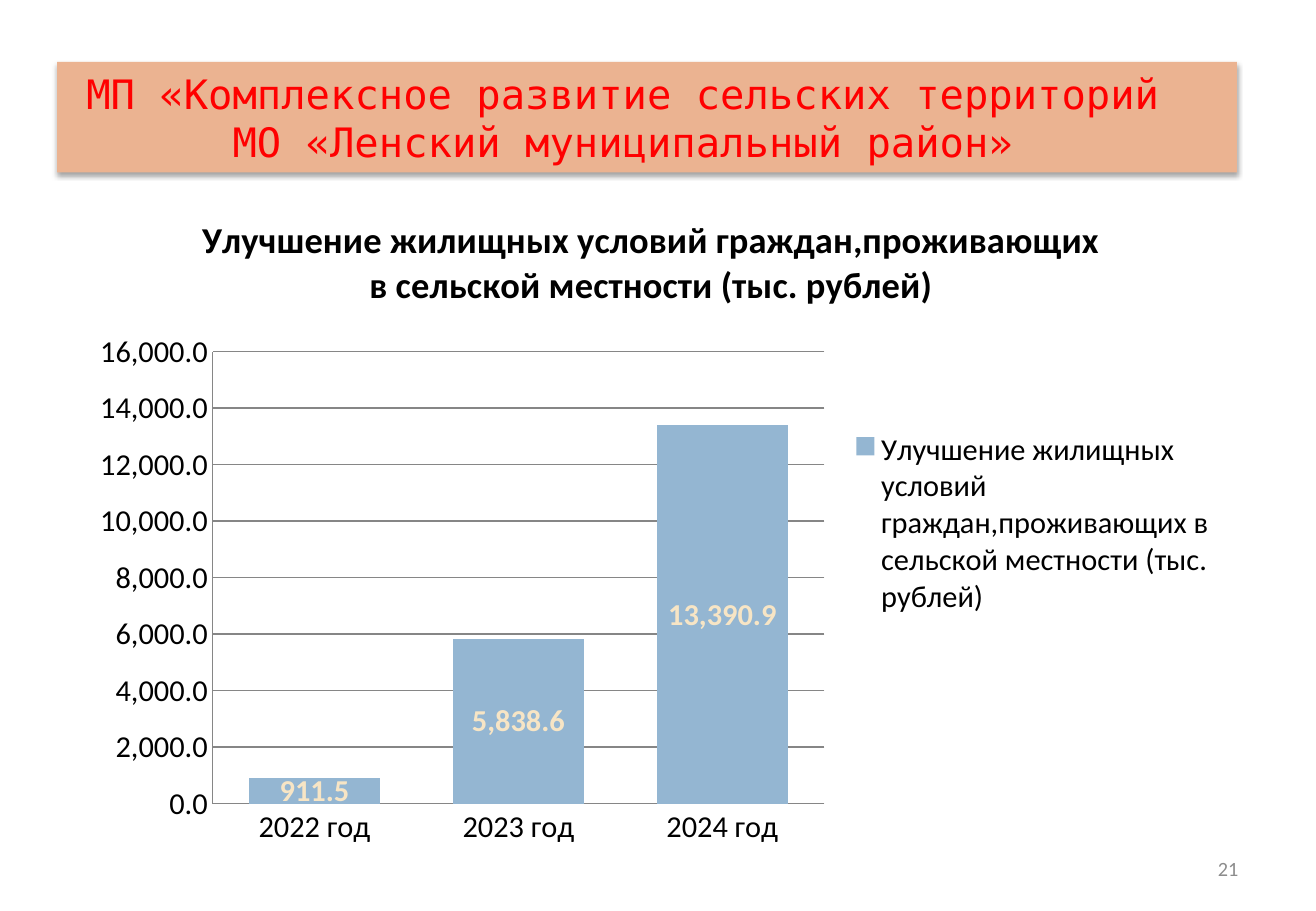
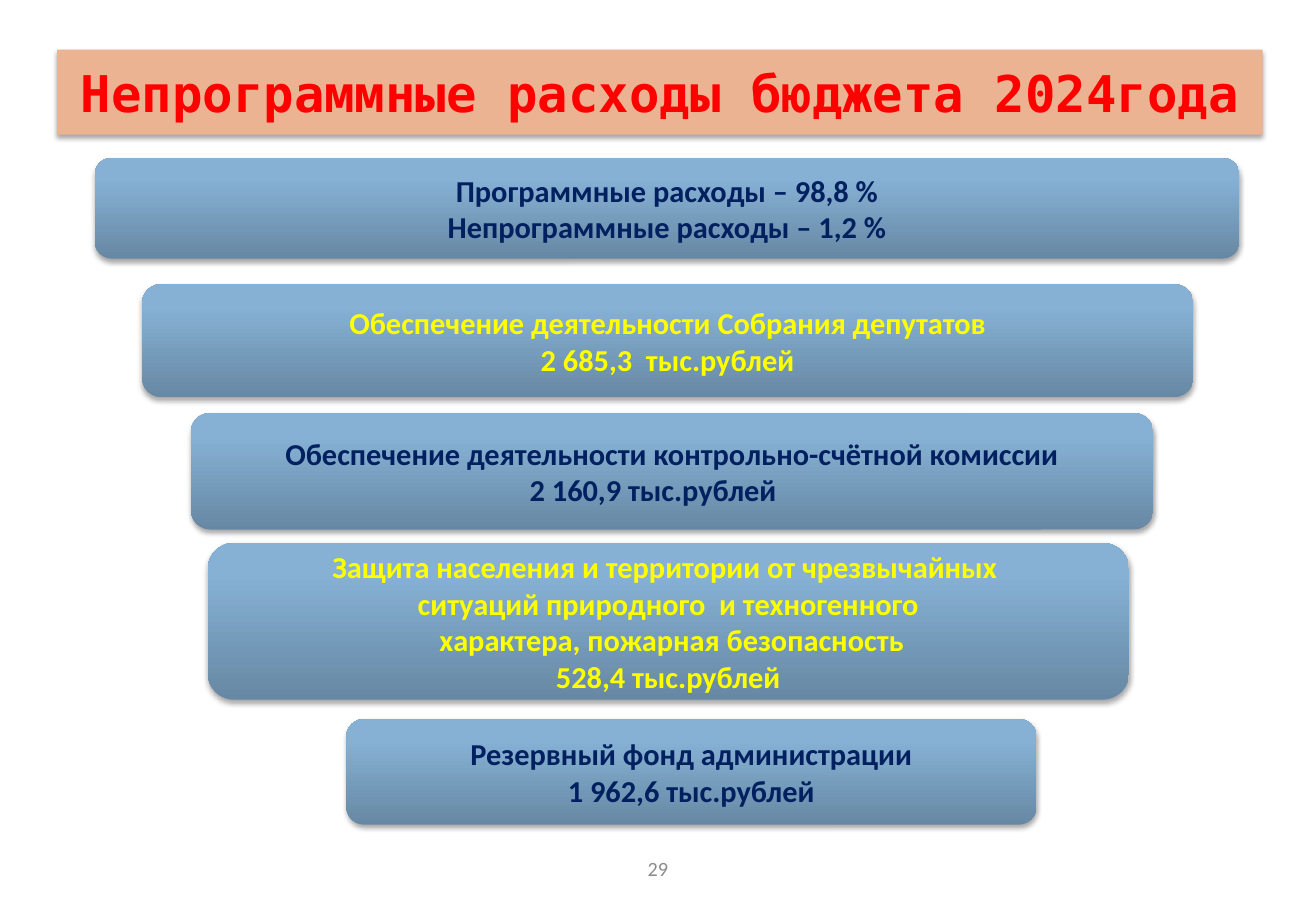
from dataclasses import dataclass
from itertools import cycle

from lxml.etree import SubElement
from copy import deepcopy
from pptx import Presentation
from pptx.chart.data import CategoryChartData
from pptx.dml.color import RGBColor
from pptx.enum.chart import XL_CHART_TYPE, XL_LEGEND_POSITION, XL_TICK_MARK
from pptx.enum.shapes import MSO_SHAPE
from pptx.enum.text import MSO_ANCHOR, PP_ALIGN
from pptx.oxml import parse_xml
from pptx.oxml.ns import nsdecls, qn
from pptx.util import Emu, Pt

PX = 9144
RED = RGBColor(0xFF, 0x00, 0x00)
PEACH = RGBColor(0xEB, 0xB3, 0x91)
GRAY = RGBColor(0x8C, 0x8C, 0x8C)
BLACK = RGBColor(0x00, 0x00, 0x00)
NAVY = RGBColor(0x00, 0x20, 0x60)
YELLOW = RGBColor(0xFF, 0xFF, 0x00)
BLUE = RGBColor(0x94, 0xB6, 0xD2)
CREAM = RGBColor(0xF7, 0xE5, 0xC5)
GRID = RGBColor(0x86, 0x86, 0x86)
STOPS = (
    (0, RGBColor(0x67, 0x88, 0xA4)),
    (0.8, RGBColor(0x86, 0xB1, 0xD4)),
    (1, RGBColor(0x86, 0xB2, 0xD7)),
)
SANS = "Calibri"
MONO = "DejaVu Sans Mono"
FORMAT = "#,##0.0"
TOPIC = "Улучшение жилищных условий граждан,проживающих в сельской местности (тыс. рублей)"


@dataclass(frozen=True)
class Box:
    left: int
    top: int
    width: int
    height: int

    def emu(self):
        return [Emu(n * PX) for n in (self.left, self.top, self.width, self.height)]


@dataclass(frozen=True)
class Style:
    face: str
    size: int
    color: RGBColor
    bold: bool = False
    align: PP_ALIGN = PP_ALIGN.CENTER


@dataclass(frozen=True)
class Line:
    text: str
    right: int = 0


@dataclass(frozen=True)
class Bar:
    box: Box
    lines: tuple


BARS = (
    Bar(Box(78, 130, 942, 83), (
        Line("Программные расходы – 98,8 %"),
        Line("Непрограммные расходы – 1,2 %"))),
    Bar(Box(117, 234, 865, 93), (
        Line("Обеспечение деятельности Собрания депутатов"),
        Line("2 685,3  тыс.рублей"))),
    Bar(Box(157, 340, 792, 96), (
        Line("Обеспечение деятельности контрольно-счётной комиссии"),
        Line("2 160,9 тыс.рублей", 31))),
    Bar(Box(171, 447, 758, 129), (
        Line("Защита населения и территории от чрезвычайных "),
        Line("ситуаций природного  и техногенного"),
        Line(" характера, пожарная безопасность"),
        Line("528,4 тыс.рублей"))),
    Bar(Box(285, 592, 568, 87), (
        Line("Резервный фонд администрации"),
        Line("1 962,6 тыс.рублей"))),
)


def paint(font, style: Style) -> None:
    font.name = style.face
    font.size = Pt(style.size)
    font.bold = style.bold
    font.color.rgb = style.color


def write(frame, lines: tuple, style: Style, wrap: bool = True) -> None:
    frame.word_wrap = wrap
    frame.vertical_anchor = MSO_ANCHOR.MIDDLE
    frame.text = "\n".join(line.text for line in lines)
    for para, line in zip(frame.paragraphs, lines):
        para.alignment = style.align
        if line.right:
            para._p.get_or_add_pPr().set("marR", str(line.right * PX))
        for run in para.runs:
            paint(run.font, style)


def add_panel(slide, kind: MSO_SHAPE, box: Box):
    panel = slide.shapes.add_shape(kind, *box.emu())
    panel.line.fill.background()
    panel.shadow.inherit = False
    effect = panel.element.spPr.find(qn("a:effectLst"))
    effect.append(parse_xml(
        f'<a:outerShdw {nsdecls("a")} blurRad="{Pt(3.1)}" dist="{Pt(1.8)}" '
        'dir="5400000" rotWithShape="0"><a:srgbClr val="000000">'
        '<a:alpha val="35000"/></a:srgbClr></a:outerShdw>'))
    return panel


def add_title(slide, box: Box, lines: tuple, size: int, bold: bool) -> None:
    panel = add_panel(slide, MSO_SHAPE.RECTANGLE, box)
    panel.fill.solid()
    panel.fill.fore_color.rgb = PEACH
    write(panel.text_frame, lines, Style(MONO, size, RED, bold))


def add_page(slide, box: Box, text: str, align: PP_ALIGN) -> None:
    note = slide.shapes.add_textbox(*box.emu())
    write(note.text_frame, (Line(text),), Style(SANS, 12, GRAY, align=align))


def add_bar(slide, bar: Bar, color: RGBColor) -> None:
    panel = add_panel(slide, MSO_SHAPE.ROUNDED_RECTANGLE, bar.box)
    panel.fill.gradient()
    panel.fill.gradient_angle = 90
    stops = panel.element.spPr.find(qn("a:gradFill")).find(qn("a:gsLst"))
    stops.append(deepcopy(stops[0]))
    for stop, (place, shade) in zip(panel.fill.gradient_stops, STOPS):
        stop.position = place
        stop.color.rgb = shade
    write(panel.text_frame, bar.lines, Style(SANS, 18, color, True), False)


def set_plot(chart) -> None:
    area = chart._chartSpace.chart.plotArea
    for old in area.findall(qn("c:layout")):
        area.remove(old)
    layout = parse_xml(f'<c:layout {nsdecls("c")}><c:manualLayout/></c:layout>')
    area.insert(0, layout)
    for tag, val in (("layoutTarget", "inner"), ("xMode", "edge"), ("yMode", "edge"),
                     ("x", 0.12), ("y", 0.245), ("w", 0.53), ("h", 0.673)):
        SubElement(layout[0], qn(f"c:{tag}")).set("val", str(val))


def add_graph(slide, box: Box) -> None:
    data = CategoryChartData(number_format=FORMAT)
    data.categories = ["2022 год", "2023 год", "2024 год"]
    data.add_series(TOPIC, (911.5, 5838.6, 13390.9))
    chart = slide.shapes.add_chart(
        XL_CHART_TYPE.COLUMN_STACKED, *box.emu(), data).chart
    paint(chart.font, Style(SANS, 18, BLACK))
    chart.has_title = True
    chart.chart_title.include_in_layout = False
    frame = chart.chart_title.text_frame
    frame.text = TOPIC
    paint(frame.paragraphs[0].runs[0].font, Style(SANS, 21.6, BLACK, True))
    chart.has_legend = True
    chart.legend.position = XL_LEGEND_POSITION.RIGHT
    chart.legend.include_in_layout = False
    for axis in (chart.category_axis, chart.value_axis):
        axis.major_tick_mark = axis.minor_tick_mark = XL_TICK_MARK.NONE
        axis.format.line.color.rgb = GRID
    scale = chart.value_axis
    scale.has_major_gridlines = True
    scale.major_gridlines.format.line.color.rgb = GRID
    scale.tick_labels.number_format = FORMAT
    scale.tick_labels.number_format_is_linked = False
    plot = chart.plots[0]
    plot.gap_width = 55
    plot.overlap = 100
    plot.vary_by_categories = False
    fill = plot.series[0].format.fill
    fill.solid()
    fill.fore_color.rgb = BLUE
    plot.has_data_labels = True
    labels = plot.data_labels
    labels.show_value = True
    labels.number_format = FORMAT
    labels.number_format_is_linked = False
    paint(labels.font, Style(SANS, 18, CREAM, True))
    set_plot(chart)


def main() -> None:
    deck = Presentation()
    deck.slide_width = Emu(1083 * PX)
    deck.slide_height = Emu(750 * PX)
    blank = deck.slide_layouts[6]

    slide = deck.slides.add_slide(blank)
    add_page(slide, Box(776, 695, 253, 40), "21", PP_ALIGN.RIGHT)
    add_title(slide, Box(47, 51, 971, 91), (
        Line("МП «Комплексное развитие сельских территорий", 40),
        Line("МО «Ленский муниципальный район»")), 24, False)
    add_graph(slide, Box(61, 154, 950, 553))

    slide = deck.slides.add_slide(blank)
    add_page(slide, Box(370, 695, 343, 40), "29", PP_ALIGN.CENTER)
    add_title(slide, Box(47, 41, 992, 70),
              (Line("Непрограммные расходы бюджета 2024года"),), 30, True)
    for bar, color in zip(BARS, cycle((NAVY, YELLOW))):
        add_bar(slide, bar, color)

    deck.save("out.pptx")


if __name__ == "__main__":
    main()
